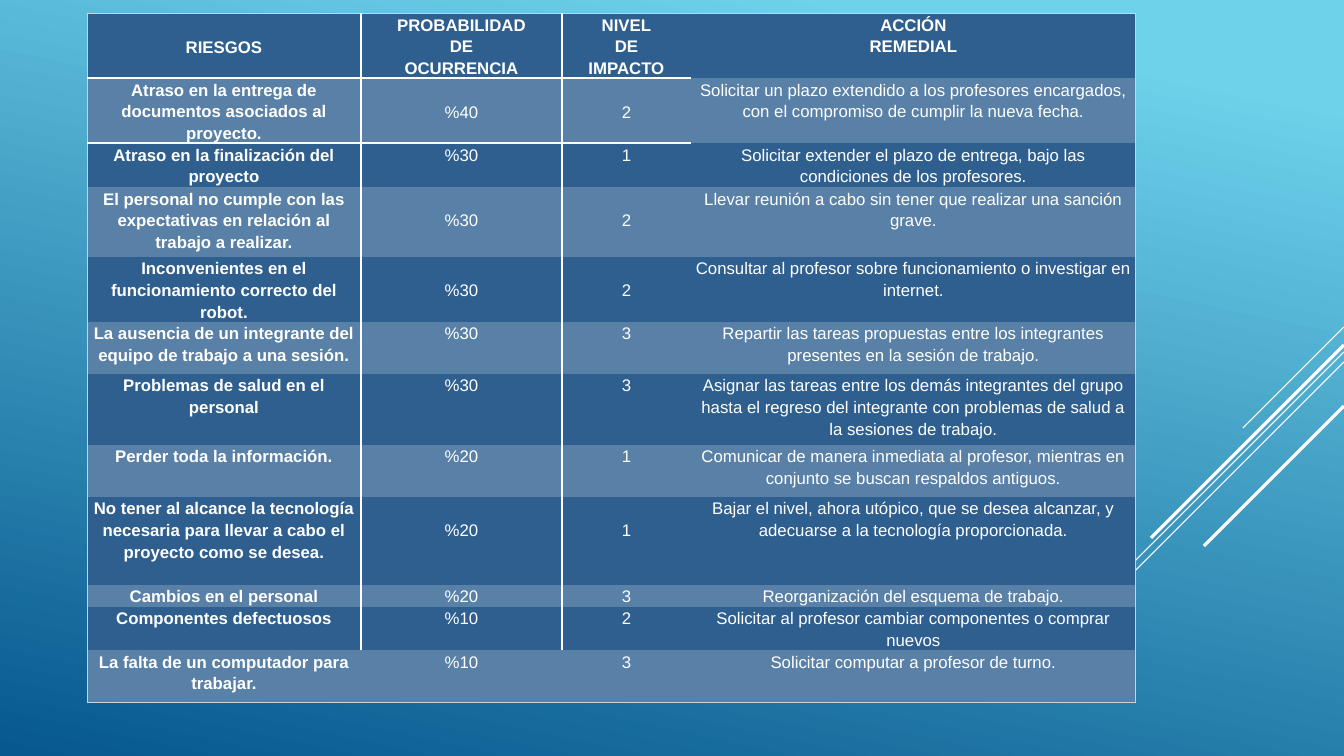
from dataclasses import dataclass

from lxml import etree
from pptx import Presentation
from pptx.dml.color import RGBColor
from pptx.enum.shapes import MSO_CONNECTOR
from pptx.enum.text import PP_ALIGN
from pptx.oxml.ns import qn
from pptx.slide import Slide
from pptx.table import _Cell
from pptx.util import Emu, Pt

CENTER = PP_ALIGN.CENTER
STRAIGHT = MSO_CONNECTOR.STRAIGHT
WIDE, HIGH = 1344, 756
PLAIN = "{2D5ABB26-0587-4C30-8999-92F81FD0307C}"


@dataclass(frozen=True)
class Theme:
    sky: str = "6ED2EB"
    deep: str = "06588E"
    white: str = "FFFFFF"
    edge: str = "CFD1D5"
    dark: str = "2E5F8F"
    light: str = "5980A6"
    font: str = "Arial"
    size: int = 12
    space: float = 1.15
    thin: float = 0.75
    rule: float = 1.25
    thick: float = 2.25


@dataclass(frozen=True)
class Risk:
    high: int
    texts: tuple[str, str, str, str]
    drops: tuple[int, ...] = ()


@dataclass(frozen=True)
class Ray:
    top: int
    run: int
    width: float


@dataclass(frozen=True)
class Edge:
    color: str
    width: float
    alpha: int = 100


THEME = Theme()
FRAME = Edge(THEME.edge, THEME.thin, 60)
SPLIT = Edge(THEME.white, THEME.rule)
BAR = Edge(THEME.white, THEME.thick)
LEFT, TOP = 87, 13
COLS = (274, 201, 129, 445)
LINE, PAD = 22, 4
MID = (1, 2)

RAYS = (
    Ray(327, 101, THEME.thin),
    Ray(352, 329, THEME.thin),
    Ray(362, 209, THEME.thin),
    Ray(345, 193, THEME.thick),
    Ray(406, 140, THEME.thick),
)

RISKS = (
    Risk(65, ("RIESGOS", "PROBABILIDAD\nDE\nOCURRENCIA", "NIVEL\nDE\nIMPACTO",
              "ACCIÓN\nREMEDIAL"), (0,)),
    Risk(65, ("Atraso en la entrega de documentos asociados al proyecto.", "%40", "2",
              "Solicitar un plazo extendido a los profesores encargados, "
              "con el compromiso de cumplir la nueva fecha."), MID),
    Risk(44, ("Atraso en la finalización del proyecto", "%30", "1",
              "Solicitar extender el plazo de entrega, bajo las condiciones de los profesores.")),
    Risk(70, ("El personal no cumple con las expectativas en relación al trabajo a realizar.",
              "%30", "2",
              "Llevar reunión a cabo sin tener que realizar una sanción grave."), MID),
    Risk(65, ("Inconvenientes en el funcionamiento correcto del robot.", "%30", "2",
              "Consultar al profesor sobre funcionamiento o investigar en internet."), MID),
    Risk(52, ("La ausencia de un integrante del equipo de trabajo a una sesión.", "%30", "3",
              "Repartir las tareas propuestas entre los integrantes "
              "presentes en la sesión de trabajo.")),
    Risk(71, ("Problemas de salud en el personal", "%30", "3",
              "Asignar las tareas entre los demás integrantes del grupo hasta el regreso "
              "del integrante con problemas de salud a la sesiones de trabajo.")),
    Risk(52, ("Perder toda la información.", "%20", "1",
              "Comunicar de manera inmediata al profesor, mientras en conjunto "
              "se buscan respaldos antiguos.")),
    Risk(88, ("No tener al alcance la tecnología necesaria para llevar a cabo el proyecto "
              "como se desea.", "%20", "1",
              "Bajar el nivel, ahora utópico, que se desea alcanzar, "
              "y adecuarse a la tecnología proporcionada."), MID),
    Risk(22, ("Cambios en el personal", "%20", "3", "Reorganización del esquema de trabajo.")),
    Risk(43, ("Componentes defectuosos", "%10", "2",
              "Solicitar al profesor cambiar componentes o comprar nuevos")),
    Risk(52, ("La falta de un computador para trabajar.", "%10", "3",
              "Solicitar computar a profesor de turno.")),
)


def px(count: int) -> Emu:
    return Emu(round(count * 12192000 / WIDE))


def paint(slide: Slide) -> None:
    fill = slide.background.fill
    fill.gradient()
    fill.gradient_angle = 360 - 102
    for stop, color, place in zip(fill.gradient_stops, (THEME.sky, THEME.deep), (0.1, 1.0)):
        stop.color.rgb = RGBColor.from_string(color)
        stop.position = place


def draw_ray(slide: Slide, ray: Ray) -> None:
    line = slide.shapes.add_connector(
        STRAIGHT, px(WIDE), px(ray.top), px(WIDE - ray.run), px(ray.top + ray.run))
    line.line.color.rgb = RGBColor.from_string(THEME.white)
    line.line.width = Pt(ray.width)
    etree.SubElement(line._element.spPr, qn("a:effectLst"))


def find_edges(row: int, col: int) -> dict[str, Edge]:
    last, end = len(RISKS) - 1, len(COLS) - 1
    edges: dict[str, Edge] = {}
    if col == 0:
        edges["L"] = FRAME
    elif col == 1 and row < last:
        edges["L"] = SPLIT
    if col == 0 and row < last:
        edges["R"] = SPLIT
    elif col == end:
        edges["R"] = FRAME
    if row == 0:
        edges["T"] = FRAME
    elif row == 1 and col < end:
        edges["T"] = BAR
    if row == 0 and col < end:
        edges["B"] = BAR
    elif row == last:
        edges["B"] = FRAME
    return edges


def draw_edge(cell: _Cell, side: str, edge: Edge) -> None:
    props = cell._tc.get_or_add_tcPr()
    line = etree.SubElement(props, qn(f"a:ln{side}"), w=str(Pt(edge.width)))
    solid = etree.SubElement(line, qn("a:solidFill"))
    color = etree.SubElement(solid, qn("a:srgbClr"), val=edge.color)
    if edge.alpha < 100:
        etree.SubElement(color, qn("a:alpha"), val=str(edge.alpha * 1000))


def fill_cell(cell: _Cell, risk: Risk, row: int, col: int) -> None:
    for side, edge in find_edges(row, col).items():
        draw_edge(cell, side, edge)
    cell.fill.solid()
    cell.fill.fore_color.rgb = RGBColor.from_string(THEME.light if row % 2 else THEME.dark)
    cell.margin_left = cell.margin_right = px(PAD)
    cell.margin_top = px(LINE if col in risk.drops else 0)
    cell.margin_bottom = 0
    for turn, text in enumerate(risk.texts[col].split("\n")):
        frame = cell.text_frame
        para = frame.add_paragraph() if turn else frame.paragraphs[0]
        para.alignment = CENTER
        para.line_spacing = THEME.space
        run = para.add_run()
        run.text = text
        run.font.name = THEME.font
        run.font.size = Pt(THEME.size)
        run.font.bold = row == 0 or col == 0
        run.font.color.rgb = RGBColor.from_string(THEME.white)


def draw_table(slide: Slide) -> None:
    table = slide.shapes.add_table(
        len(RISKS), len(COLS), px(LEFT), px(TOP),
        px(sum(COLS)), px(sum(risk.high for risk in RISKS))).table
    table.horz_banding = False
    table._tbl.tblPr.find(qn("a:tableStyleId")).text = PLAIN
    for col, width in enumerate(COLS):
        table.columns[col].width = px(width)
    for row, risk in enumerate(RISKS):
        table.rows[row].height = px(risk.high)
        for col in range(len(COLS)):
            fill_cell(table.cell(row, col), risk, row, col)


def main() -> None:
    deck = Presentation()
    deck.slide_width, deck.slide_height = px(WIDE), px(HIGH)
    slide = deck.slides.add_slide(deck.slide_layouts[6])
    paint(slide)
    for ray in RAYS:
        draw_ray(slide, ray)
    draw_table(slide)
    deck.save("out.pptx")


if __name__ == "__main__":
    main()
